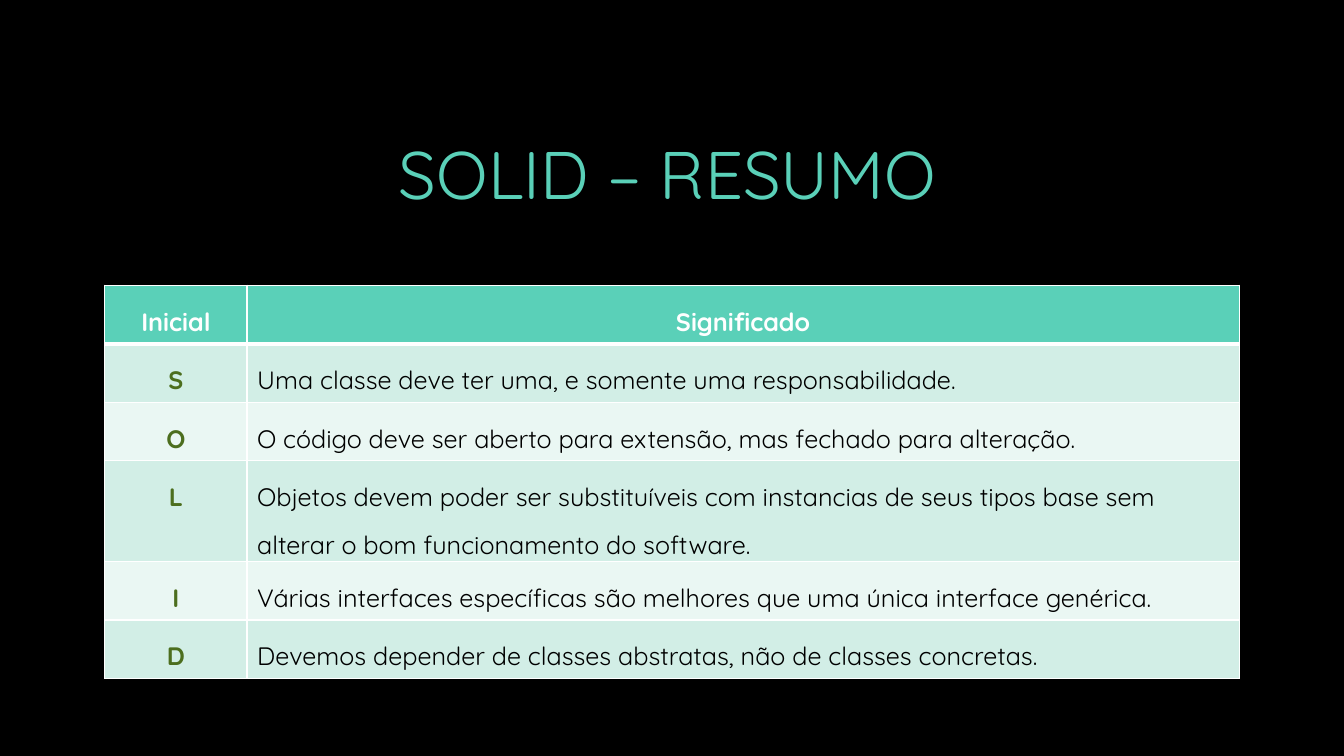
"""Build the SOLID summary slide: a title above a two-column table."""
from lxml import etree
from pptx import Presentation
from pptx.dml.color import RGBColor
from pptx.enum.text import MSO_ANCHOR, PP_ALIGN
from pptx.oxml.ns import qn
from pptx.util import Inches, Pt


def paint(fill, color):
    fill.solid()
    fill.fore_color.rgb = RGBColor.from_string(color)


def write(frame, text, color, align, size=18, bold=False, gap=1.0):
    para = frame.paragraphs[0]
    para.alignment = align
    para.line_spacing = gap
    run = para.add_run()
    run.text = text
    look = {"name": "Quicksand", "size": Pt(size), "bold": bold}
    for key, value in look.items():
        setattr(run.font, key, value)
    paint(run.font.fill, color)


MINT, WHITE, GREEN, BLACK = "5AD0B8", "FFFFFF", "4C6E1E", "000000"
BANDS = ["EAF7F3", "D2EEE6"]
ROWS = [
    ("Inicial", "Significado"),
    ("S", "Uma classe deve ter uma, e somente uma responsabilidade."),
    ("O", "O código deve ser aberto para extensão, mas fechado para alteração."),
    ("L", "Objetos devem poder ser substituíveis com instancias de seus tipos "
          "base sem alterar o bom funcionamento do software."),
    ("I", "Várias interfaces específicas são melhores que uma única interface genérica."),
    ("D", "Devemos depender de classes abstratas, não de classes concretas."),
]

deck = Presentation()
deck.slide_width, deck.slide_height = Inches(13.33), Inches(7.5)
slide = deck.slides.add_slide(deck.slide_layouts[6])
paint(slide.background.fill, BLACK)

title = slide.shapes.add_textbox(Inches(0.61), Inches(0.67), Inches(12.02), Inches(2.08))
title.text_frame.word_wrap = True
title.text_frame.vertical_anchor = MSO_ANCHOR.MIDDLE
write(title.text_frame, "SOLID – RESUMO", MINT, PP_ALIGN.CENTER, size=48)

table = slide.shapes.add_table(
    len(ROWS), 2, Inches(1.04), Inches(2.83), Inches(11.25), Inches(0.58 * len(ROWS))
).table
table.columns[0].width = Inches(1.41)
table.columns[1].width = Inches(9.84)

for r, row in enumerate(ROWS):
    table.rows[r].height = Inches(0.58)
    for c, text in enumerate(row):
        cell = table.cell(r, c)
        head = r == 0
        bold = head or c == 0
        color = WHITE if head else (GREEN, BLACK)[c]
        align = PP_ALIGN.CENTER if bold else PP_ALIGN.LEFT
        write(cell.text_frame, text, color, align, bold=bold, gap=1.5)
        paint(cell.fill, MINT if head else BANDS[r % 2])
        props = cell._tc.get_or_add_tcPr()
        widths = {"L": 1, "R": 1, "T": 3 if r == 1 else 1, "B": 3 if head else 1}
        for spot, (side, width) in enumerate(widths.items()):
            line = etree.Element(qn(f"a:ln{side}"), w=str(Pt(width)))
            solid = etree.SubElement(line, qn("a:solidFill"))
            etree.SubElement(solid, qn("a:srgbClr"), val=WHITE)
            props.insert(spot, line)

deck.save("out.pptx")
